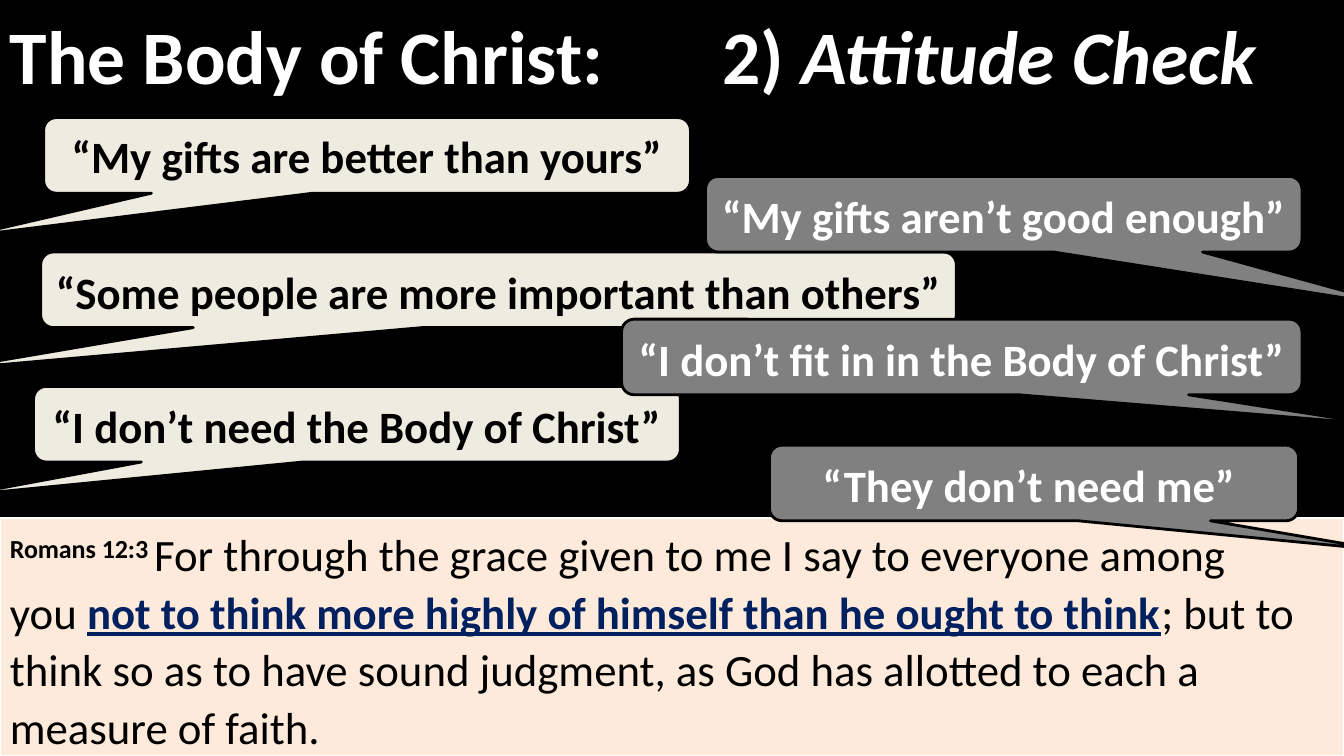
import pptx
import pptx.util
import pptx.dml.color
import pptx.enum.shapes
import pptx.enum.text
import pptx.oxml
import pptx.oxml.ns

SHAPE = pptx.enum.shapes.MSO_SHAPE
ANCHOR = pptx.enum.text.MSO_ANCHOR
ALIGN = pptx.enum.text.PP_ALIGN
COLORS = {
    "black": "000000", "white": "FFFFFF", "peach": "FDEADA",
    "cream": "EEECE1", "gray": "808080", "navy": "002060",
}
# The slide is 160 columns by 90 rows of square cells
CELL = pptx.util.Inches(1 / 12)
COLS, ROWS = 160, 90
CALLOUT_ROWS = 9
TITLE_TAB = 84.8
LOOSE = 1.07
NBSP = chr(160)  # no-break space

# Left column, top row, columns wide, pointer tip (x, y), line spacing, text
PROUD = [
    (5.2, 14, 77, (-0.62, 1.07), 1.0, "“My gifts are better than yours”"),
    (4.85, 30, 109, (-0.6, 1.05), LOOSE,
     "“Some people are more important than others”"),
    (4, 46, 77, (-0.61, 0.94), LOOSE, "“I don’t need the Body of Christ”"),
]
DISCOURAGED = [
    (84, 21, 71, (0.67, 1.23), LOOSE, "“My gifts aren’t good enough”"),
    (74, 38, 81, (0.61, 0.89), LOOSE, "“I don’t fit in in the Body of Christ” "),
    (91.6, 53, 63, (0.66, 0.89), LOOSE, "“They don’t need me” "),
]


def grid(n):
    return round(n * CELL)


def rgb(name):
    return pptx.dml.color.RGBColor.from_string(COLORS[name])


def add_box(s, kind, left, top, width, height, fill, line=None, weight=2):
    sp = s.shapes.add_shape(kind, *map(grid, (left, top, width, height)))
    sp.shadow.inherit = False
    sp.fill.solid()
    sp.fill.fore_color.rgb = rgb(fill)
    if line:
        sp.line.color.rgb = rgb(line)
        sp.line.width = pptx.util.Pt(weight)
    else:
        sp.line.fill.background()
    sp.text_frame.word_wrap = True
    sp.text_frame.vertical_anchor = ANCHOR.MIDDLE
    return sp


def add_run(p, text, color, size=32, bold=True, italic=False, underline=False):
    r = p.add_run()
    r.text = text
    r.font.name = "Calibri"
    r.font.size = pptx.util.Pt(size)
    r.font.color.rgb = rgb(color)
    r.font.bold, r.font.italic, r.font.underline = bold, italic, underline
    return r


def add_tab_stop(p, position):
    ns = pptx.oxml.ns.nsdecls("a")
    p._p.get_or_add_pPr().append(pptx.oxml.parse_xml(
        f'<a:tabLst {ns}><a:tab pos="{position}" algn="l"/></a:tabLst>'))


def add_verse(s):
    sp = add_box(s, SHAPE.RECTANGLE, 0, 61.7, COLS, ROWS - 61.7, "peach", "white", 1.5)
    sp.text_frame.vertical_anchor = ANCHOR.TOP
    p = sp.text_frame.paragraphs[0]
    p.alignment = ALIGN.LEFT
    p.line_spacing = LOOSE
    reference = add_run(p, f"Romans 12:3{NBSP}", "black")
    reference.font._element.set("baseline", "30000")
    add_run(p, f"For through{NBSP}the grace given to me I say to everyone "
            f"among you{NBSP}", "black", bold=False)
    add_run(p, "not to think more highly of himself than he ought to think",
            "navy", underline=True)
    add_run(p, "; but to think so as to have sound judgment, as God has allotted "
            f"to{NBSP}each a measure of faith.", "black", bold=False)


def add_title(s):
    sp = add_box(s, SHAPE.RECTANGLE, 0, 0, COLS, 12.8, "black")
    p = sp.text_frame.paragraphs[0]
    p.alignment = ALIGN.LEFT
    add_tab_stop(p, grid(TITLE_TAB))
    add_run(p, "The Body of Christ:\t2) ", "white", 54)
    add_run(p, "Attitude Check", "white", 54, italic=True)


def add_callout(s, left, top, width, tip, spacing, text, fill, color):
    sp = add_box(s, SHAPE.ROUNDED_RECTANGULAR_CALLOUT, left, top, width,
                 CALLOUT_ROWS, fill, "black")
    sp.adjustments[0], sp.adjustments[1] = tip
    p = sp.text_frame.paragraphs[0]
    p.alignment = ALIGN.CENTER
    p.line_spacing = spacing
    add_run(p, text, color)


def main():
    prs = pptx.Presentation()
    prs.slide_width, prs.slide_height = grid(COLS), grid(ROWS)
    s = prs.slides.add_slide(prs.slide_layouts[6])
    s.background.fill.solid()
    s.background.fill.fore_color.rgb = rgb("black")

    # Scripture panel and heading
    add_verse(s)
    add_title(s)

    # Speech callouts: proud on the left, discouraged on the right
    for callout in PROUD:
        add_callout(s, *callout, "cream", "black")
    for callout in DISCOURAGED:
        add_callout(s, *callout, "gray", "white")

    prs.save("out.pptx")


if __name__ == "__main__":
    main()
